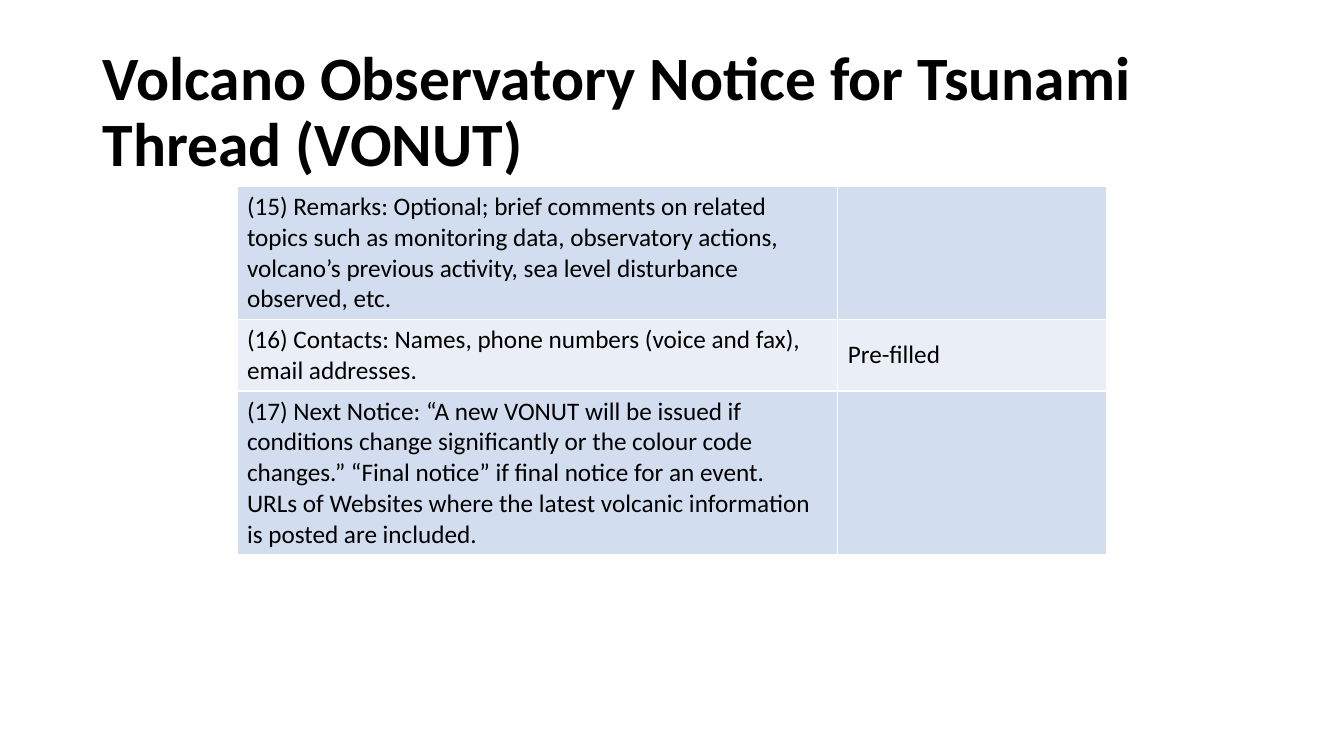
import pptx
import pptx.dml.color
import pptx.enum.text
import pptx.oxml
import pptx.oxml.ns
import pptx.util


def colour(value):
    return pptx.dml.color.RGBColor.from_string(value)


class NoticeSlide:
    """Draws the elements of one slide on a grid of tenth-inch cells."""

    font = "Calibri"
    ink = "000000"
    border = "FFFFFF"
    bands = ("D2DEEF", "EAEFF7")
    unit = 0.1

    def __init__(self, presentation):
        self.slide = presentation.slides.add_slide(presentation.slide_layouts[6])

    def grid(self, *counts):
        return [pptx.util.Inches(count * self.unit) for count in counts]

    def set_text(self, text_frame, text, size, bold=False):
        text_frame.text = text
        for paragraph in text_frame.paragraphs:
            paragraph.font.name = self.font
            paragraph.font.size = pptx.util.Pt(size)
            paragraph.font.bold = bold
            paragraph.font.color.rgb = colour(self.ink)

    def title(self, box, text):
        text_frame = self.slide.shapes.add_textbox(*self.grid(*box)).text_frame
        text_frame.word_wrap = True
        text_frame.vertical_anchor = pptx.enum.text.MSO_ANCHOR.MIDDLE
        self.set_text(text_frame, text, 44, bold=True)
        text_frame.paragraphs[0].line_spacing = 0.9

    def outline(self, cell):
        properties = cell._tc.get_or_add_tcPr()
        for side in "LRTB":
            properties.append(pptx.oxml.parse_xml(
                f'<a:ln{side} {pptx.oxml.ns.nsdecls("a")} w="{pptx.util.Pt(1)}">'
                f'<a:solidFill><a:srgbClr val="{self.border}"/></a:solidFill>'
                f'</a:ln{side}>'))

    def table(self, left, top, widths, heights, rows):
        box = self.grid(left, top, sum(widths), sum(heights))
        table = self.slide.shapes.add_table(len(rows), len(widths), *box).table
        table.first_row = table.horz_banding = False
        for column, width in zip(table.columns, self.grid(*widths)):
            column.width = width
        for row, height in zip(table.rows, self.grid(*heights)):
            row.height = height
        for row_index, texts in enumerate(rows):
            for column_index, text in enumerate(texts):
                cell = table.cell(row_index, column_index)
                self.outline(cell)
                cell.fill.solid()
                cell.fill.fore_color.rgb = colour(self.bands[row_index % 2])
                self.set_text(cell.text_frame, text, 18)
                if column_index == 1:
                    cell.vertical_anchor = pptx.enum.text.MSO_ANCHOR.MIDDLE


def main():
    presentation = pptx.Presentation()
    presentation.slide_width = pptx.util.Inches(13.33)
    presentation.slide_height = pptx.util.Inches(7.5)
    notice = NoticeSlide(presentation)
    notice.title((9.2, 4, 115, 14.5),
                 "Volcano Observatory Notice for Tsunami Thread (VONUT)")
    notice.table(23.5, 18.5, (59.6, 26.7), (13.2, 7.1, 16.2), [
        ("(15) Remarks: Optional; brief comments on related topics such as "
         "monitoring data, observatory actions, volcano’s previous activity, "
         "sea level disturbance observed, etc.", ""),
        ("(16) Contacts: Names, phone numbers (voice and fax), email addresses.",
         "Pre-filled"),
        ("(17) Next Notice: “A new VONUT will be issued if conditions change "
         "significantly or the colour code changes.” “Final notice” if final "
         "notice for an event.\n"
         "URLs of Websites where the latest volcanic information is posted are "
         "included.", ""),
    ])
    presentation.save("out.pptx")


if __name__ == "__main__":
    main()
